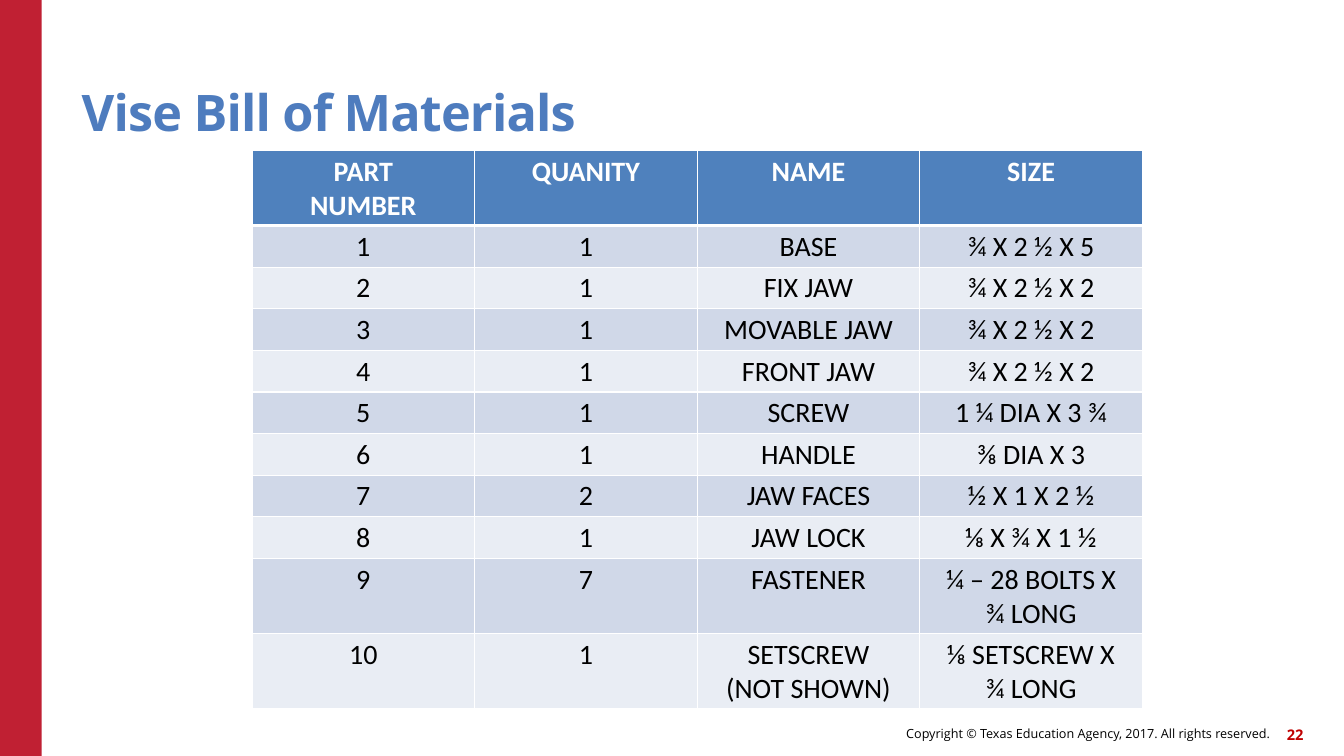
"""Build the vise bill of materials slide."""
from lxml.etree import SubElement
from pptx import Presentation
from pptx.dml.color import RGBColor
from pptx.enum.shapes import MSO_SHAPE
from pptx.enum.text import MSO_ANCHOR, PP_ALIGN
from pptx.oxml.ns import qn
from pptx.util import Cm, Pt

TITLE = "Vise Bill of Materials"
COPYRIGHT = "Copyright © Texas Education Agency, 2017. All rights reserved."
PAGE = "22"
HEADINGS = ("PART\nNUMBER", "QUANITY", "NAME", "SIZE")
PARTS = [
    ("1", "BASE", "¾ X 2 ½ X 5"),
    ("1", "FIX JAW", "¾ X 2 ½ X 2"),
    ("1", "MOVABLE JAW", "¾ X 2 ½ X 2"),
    ("1", "FRONT JAW", "¾ X 2 ½ X 2"),
    ("1", "SCREW", "1 ¼ DIA X 3 ¾"),
    ("1", "HANDLE", "⅜ DIA X 3"),
    ("2", "JAW FACES", "½ X 1 X 2 ½"),
    ("1", "JAW LOCK", "⅛ X ¾ X 1 ½"),
    ("7", "FASTENER", "¼ – 28 BOLTS X\n¾ LONG"),
    ("1", "SETSCREW\n(NOT SHOWN)", "⅛ SETSCREW X\n¾ LONG"),
]
HEADER_FILL = "4F81BD"
BAND_FILLS = ("E9EDF4", "D0D8E8")
COLUMN_WIDTH, ROW_HEIGHT = 5.61, 1.04


def color(value):
    return RGBColor.from_string(value)


def style(paragraph, size, face, ink, bold, align):
    paragraph.alignment = align
    font = paragraph.font
    font.size, font.name, font.bold = Pt(size), face, bold
    font.color.rgb = color(ink)


def add_label(slide, text, box, size, ink, bold, align, anchor):
    frame = slide.shapes.add_textbox(*map(Cm, box)).text_frame
    frame.word_wrap = True
    frame.vertical_anchor = anchor
    frame.margin_left = frame.margin_right = 0
    frame.margin_top = frame.margin_bottom = 0
    paragraph = frame.paragraphs[0]
    paragraph.text = text
    style(paragraph, size, "Open Sans", ink, bold, align)
    return paragraph


def add_borders(cell, **widths):
    for side, width in widths.items():
        line = SubElement(cell._tc.get_or_add_tcPr(), qn(f"a:ln{side}"), w=str(Pt(width)))
        SubElement(SubElement(line, qn("a:solidFill")), qn("a:srgbClr"), val="FFFFFF")


def fill_cell(cell, text, row):
    header = row == 0
    cell.text = text
    cell.margin_left = cell.margin_right = Cm(0.1)
    cell.margin_top = cell.margin_bottom = Cm(0.1)
    for paragraph in cell.text_frame.paragraphs:
        style(paragraph, 20, "Calibri", "FFFFFF" if header else "000000", header, PP_ALIGN.CENTER)
    add_borders(cell, L=1, R=1, T=3 if row == 1 else 1, B=3 if header else 1)
    cell.fill.solid()
    cell.fill.fore_color.rgb = color(HEADER_FILL if header else BAND_FILLS[row % 2])


def add_parts_table(slide):
    rows = [HEADINGS] + [(str(number), *part) for number, part in enumerate(PARTS, 1)]
    columns = len(HEADINGS)
    table = slide.shapes.add_table(
        len(rows), columns, Cm(6.35), Cm(3.79),
        Cm(COLUMN_WIDTH * columns), Cm(ROW_HEIGHT * len(rows))).table
    for column in table.columns:
        column.width = Cm(COLUMN_WIDTH)
    for row, texts in enumerate(rows):
        table.rows[row].height = Cm(ROW_HEIGHT)
        for column, text in enumerate(texts):
            fill_cell(table.cell(row, column), text, row)


def main():
    deck = Presentation()
    deck.slide_width, deck.slide_height = Cm(33.87), Cm(19.05)
    slide = deck.slides.add_slide(deck.slide_layouts[6])

    stripe = slide.shapes.add_shape(MSO_SHAPE.RECTANGLE, 0, 0, Cm(1.05), deck.slide_height)
    stripe.shadow.inherit = False
    stripe.fill.solid()
    stripe.fill.fore_color.rgb = color("C02033")
    stripe.line.fill.background()

    add_label(slide, COPYRIGHT, (15.6, 18.09, 16.4, 0.81), 9, "000000", False,
              PP_ALIGN.RIGHT, MSO_ANCHOR.MIDDLE)
    add_label(slide, PAGE, (31.78, 18.1, 1.07, 0.81), 10.5, "C00000", True,
              PP_ALIGN.RIGHT, MSO_ANCHOR.MIDDLE)
    title = add_label(slide, TITLE, (2.06, 1.14, 27.94, 2.44), 36, "4E7CBE", True,
                      PP_ALIGN.LEFT, MSO_ANCHOR.BOTTOM)
    title.line_spacing = 0.9
    title.runs[0].font._element.set("spc", "-60")
    add_parts_table(slide)
    deck.save("out.pptx")


if __name__ == "__main__":
    main()
